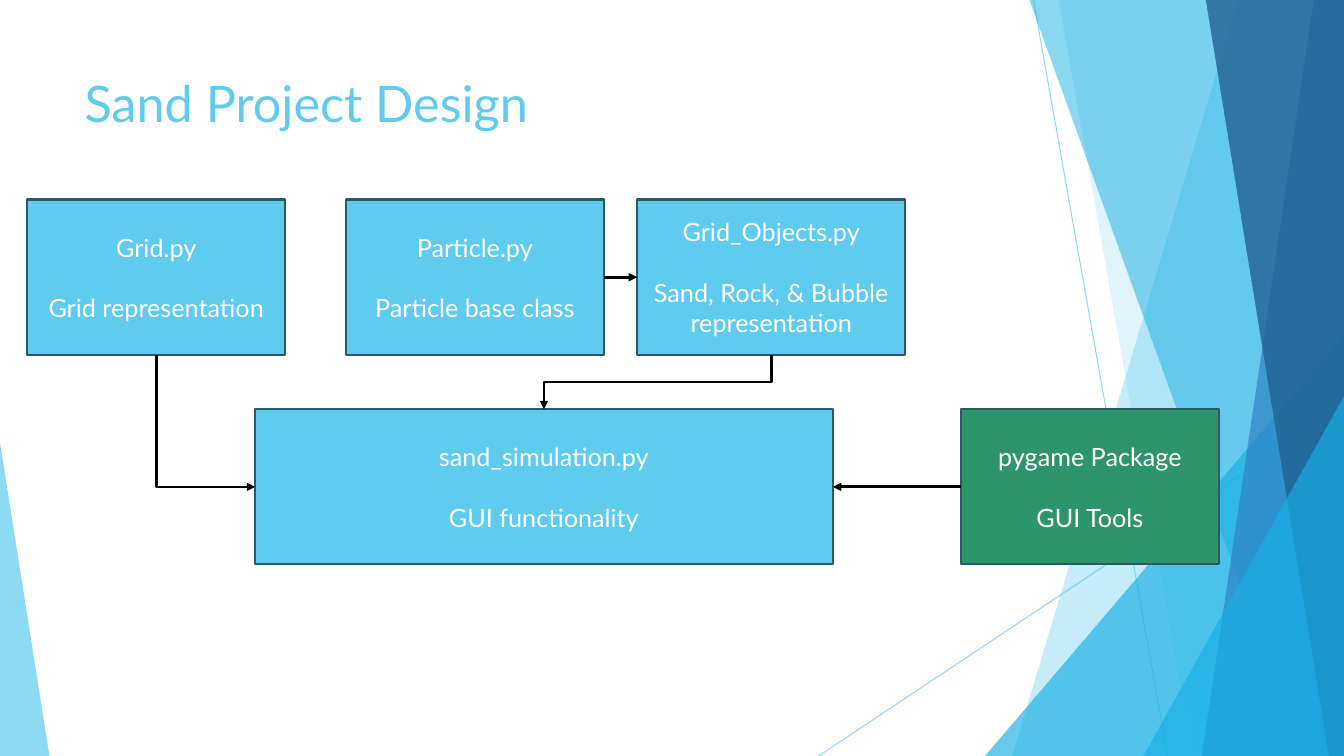
from lxml.etree import SubElement
from pptx import Presentation
from pptx.dml.color import RGBColor
from pptx.enum.shapes import MSO_CONNECTOR, MSO_SHAPE
from pptx.enum.text import MSO_ANCHOR, PP_ALIGN
from pptx.oxml.ns import qn
from pptx.util import Inches, Pt

WIDE, HIGH = 13.33, 7.5
SKY, CYAN, BLUE, NAVY = "5FCBEF", "17B0E4", "2E83C3", "226292"
GREEN, EDGE, WHITE, BLACK = "2E946B", "2A5969", "FFFFFF", "000000"
TOP, LEFT, BOTTOM, RIGHT = range(4)  # connection sites of a rectangle


def rgb(code):
    return RGBColor.from_string(code)


def fade(fill, percent):
    color = fill._xPr.find(".//" + qn("a:srgbClr"))
    SubElement(color, qn("a:alpha"), val=str(percent * 1000))


def tint(shape, code, alpha):
    shape.shadow.inherit = False
    shape.fill.solid()
    shape.fill.fore_color.rgb = rgb(code)
    fade(shape.fill, alpha)
    shape.line.fill.background()


def draw(link, code, width):
    link.line.color.rgb = rgb(code)
    link.line.width = Pt(width)
    SubElement(link._element.spPr, qn("a:effectLst"))


def ray(shapes, x1, y1, x2, y2):
    link = shapes.add_connector(
        MSO_CONNECTOR.STRAIGHT, Inches(x1), Inches(y1), Inches(x2), Inches(y2))
    draw(link, SKY, 0.75)
    fade(link.line.fill, 70)


def band(shapes, top, foot, code, alpha):
    """Strip from a slanted left edge to the right side of the slide."""
    form = shapes.build_freeform(Inches(top), 0)
    form.add_line_segments([(Inches(x), Inches(y)) for x, y in
                            ((WIDE, 0), (WIDE, HIGH), (foot, HIGH))])
    tint(form.convert_to_shape(), code, alpha)


def wedge(shapes, x, y, wide, apex, code, alpha):
    """Triangle standing on the bottom of the slide."""
    shape = shapes.add_shape(MSO_SHAPE.ISOSCELES_TRIANGLE, Inches(x),
                             Inches(y), Inches(wide), Inches(HIGH - y))
    shape.adjustments[0] = apex
    tint(shape, code, alpha)


def backdrop(shapes):
    ray(shapes, 10.25, 0, 11.58, HIGH)
    ray(shapes, WIDE, 4.03, 8.12, HIGH)
    band(shapes, 12.28, 10.04, SKY, 36)
    band(shapes, 10.5, 11.83, SKY, 20)
    wedge(shapes, 9.77, 3.33, WIDE - 9.77, 1, CYAN, 66)
    band(shapes, 10.21, 12.91, CYAN, 50)
    band(shapes, 13.03, 11.92, BLUE, 70)
    band(shapes, 11.96, 13.18, NAVY, 80)
    wedge(shapes, 11.34, 3.93, WIDE - 11.34, 1, CYAN, 66)
    wedge(shapes, 0, 4.39, 0.49, 0, SKY, 70)


def write(par, text, size, code):
    par.text = text
    par.font.name = "Lato"
    par.font.size = Pt(size)
    par.font.color.rgb = rgb(code)


def title(shapes, x, y, wide, high, text):
    box = shapes.add_textbox(Inches(x), Inches(y), Inches(wide), Inches(high))
    box.text_frame.word_wrap = True
    write(box.text_frame.paragraphs[0], text, 36, SKY)


def module(shapes, x, y, wide, name, role, code=SKY):
    box = shapes.add_shape(MSO_SHAPE.RECTANGLE, Inches(x), Inches(y),
                           Inches(wide), Inches(1.54))
    box.shadow.inherit = False
    box.fill.solid()
    box.fill.fore_color.rgb = rgb(code)
    box.line.color.rgb = rgb(EDGE)
    box.line.width = Pt(1.5)
    frame = box.text_frame
    frame.word_wrap = True
    frame.vertical_anchor = MSO_ANCHOR.MIDDLE
    head, body = frame.paragraphs[0], frame.add_paragraph()
    for par, text in ((head, name), (body, role)):
        write(par, text, 18, WHITE)
        par.alignment = PP_ALIGN.CENTER
    body.space_before = Pt(21.6)
    return box


def arrow(shapes, start, out, end, into, width=2):
    link = shapes.add_connector(MSO_CONNECTOR.STRAIGHT, 0, 0, 0, 0)
    link.begin_connect(start, out)
    link.end_connect(end, into)
    draw(link, BLACK, width)
    SubElement(link.line._get_or_add_ln(), qn("a:tailEnd"), type="triangle")
    return link


def bend(link, preset):
    """Turn a downward arrow into an elbow that leaves vertically."""
    x1, y1, x2, y2 = link.begin_x, link.begin_y, link.end_x, link.end_y
    wide, high = y2 - y1, abs(x2 - x1)
    link.left, link.top = (x1 + x2 - wide) // 2, (y1 + y2 - high) // 2
    link.width, link.height = wide, high
    props = link._element.spPr
    props.find(qn("a:prstGeom")).set("prst", preset)
    frame = props.find(qn("a:xfrm"))
    right = x2 > x1
    frame.set("rot", str((270 if right else 90) * 60000))
    frame.set("flipH", "1" if right else "0")


def diagram(shapes, x, y):
    low = y + 2.08
    sim = module(shapes, x + 2.26, low, 5.73,
                 "sand_simulation.py", "GUI functionality")
    things = module(shapes, x + 6.05, y, 2.66, "Grid_Objects.py",
                    "Sand, Rock, & Bubble representation")
    grid = module(shapes, x, y, 2.56, "Grid.py", "Grid representation")
    tools = module(shapes, x + 9.26, low, 2.56,
                   "pygame Package", "GUI Tools", GREEN)
    grain = module(shapes, x + 3.16, y, 2.56,
                   "Particle.py", "Particle base class")
    # Arrows
    bend(arrow(shapes, things, BOTTOM, sim, TOP), "bentConnector3")
    bend(arrow(shapes, grid, BOTTOM, sim, LEFT, 1.75), "bentConnector2")
    arrow(shapes, tools, LEFT, sim, RIGHT)
    arrow(shapes, grain, RIGHT, things, LEFT)


def main():
    deck = Presentation()
    deck.slide_width, deck.slide_height = Inches(WIDE), Inches(HIGH)
    shapes = deck.slides.add_slide(deck.slide_layouts[6]).shapes
    backdrop(shapes)
    title(shapes, 0.74, 0.67, 9.4, 1.44, "Sand Project Design")
    diagram(shapes, 0.27, 1.98)
    deck.save("out.pptx")


if __name__ == "__main__":
    main()
